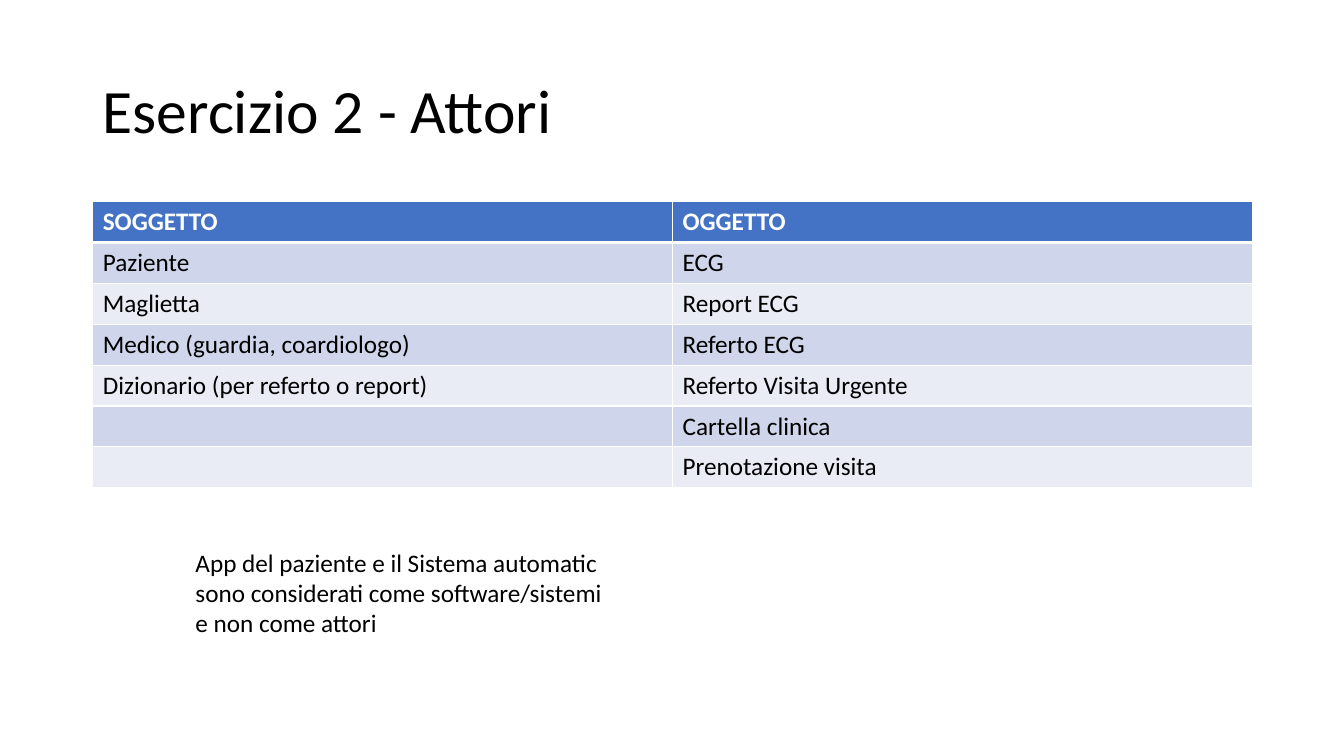
from dataclasses import dataclass

from lxml.etree import SubElement
from pptx import Presentation
from pptx.dml.color import RGBColor
from pptx.enum.text import MSO_ANCHOR
from pptx.oxml.ns import qn
from pptx.util import Inches, Pt


@dataclass(frozen=True)
class Theme:
    """Colours, font and type sizes of the slide."""

    font: str = "Calibri"
    title_size: int = 44
    body_size: int = 18
    text: str = "000000"
    white: str = "FFFFFF"
    header: str = "4472C4"
    bands: tuple = ("CFD5EA", "E9EBF5")
    thin_border: int = 1
    thick_border: int = 3


THEME = Theme()

ACTORS = [
    ("SOGGETTO", "OGGETTO"),
    ("Paziente", "ECG"),
    ("Maglietta", "Report ECG"),
    ("Medico (guardia, coardiologo)", "Referto ECG"),
    ("Dizionario (per referto o report)", "Referto Visita Urgente"),
    ("", "Cartella clinica"),
    ("", "Prenotazione visita"),
]


def write_text(frame, text, size=THEME.body_size, color=THEME.text, bold=False, line_spacing=None):
    """Write one formatted paragraph into a text frame."""
    paragraph = frame.paragraphs[0]
    paragraph.text = text
    paragraph.line_spacing = line_spacing
    paragraph.font.name = THEME.font
    paragraph.font.size = Pt(size)
    paragraph.font.bold = bold
    paragraph.font.color.rgb = RGBColor.from_string(color)


def add_text_box(slide, left, top, width, height, text, anchor=MSO_ANCHOR.TOP, **text_format):
    """Add a wrapping text box with one paragraph."""
    box = slide.shapes.add_textbox(Inches(left), Inches(top), Inches(width), Inches(height))
    frame = box.text_frame
    frame.word_wrap = True
    frame.vertical_anchor = anchor
    write_text(frame, text, **text_format)


def add_border(cell, side, width):
    """Draw a white border on one side of a cell."""
    properties = cell._tc.get_or_add_tcPr()
    line = SubElement(properties, qn(f"a:ln{side}"), w=str(Pt(width)))
    fill = SubElement(line, qn("a:solidFill"))
    SubElement(fill, qn("a:srgbClr"), val=THEME.white)


def format_cell(cell, text, row_index):
    """Fill, border and label a cell according to its row."""
    is_header = row_index == 0
    top = THEME.thick_border if row_index == 1 else THEME.thin_border
    bottom = THEME.thick_border if is_header else THEME.thin_border
    for side, width in zip("LRTB", (THEME.thin_border, THEME.thin_border, top, bottom)):
        add_border(cell, side, width)
    fill_color = THEME.header if is_header else THEME.bands[(row_index - 1) % 2]
    cell.fill.solid()
    cell.fill.fore_color.rgb = RGBColor.from_string(fill_color)
    text_color = THEME.white if is_header else THEME.text
    write_text(cell.text_frame, text, color=text_color, bold=is_header)


def add_table(slide, left, top, width, height, rows):
    """Add a banded table with equal columns and rows."""
    frame = slide.shapes.add_table(
        len(rows), len(rows[0]), Inches(left), Inches(top), Inches(width), Inches(height)
    )
    for row_index, row in enumerate(rows):
        for column_index, text in enumerate(row):
            format_cell(frame.table.cell(row_index, column_index), text, row_index)


def main():
    """Build and save the slide."""
    presentation = Presentation()
    presentation.slide_width = Inches(13.33)
    presentation.slide_height = Inches(7.5)
    slide = presentation.slides.add_slide(presentation.slide_layouts[6])
    add_text_box(
        slide, 0.92, 0.4, 11.5, 1.45, "Esercizio 2 - Attori",
        anchor=MSO_ANCHOR.MIDDLE, size=THEME.title_size, line_spacing=0.9,
    )
    add_table(slide, 0.92, 2, 11.5, 2.84, ACTORS)
    add_text_box(
        slide, 1.84, 5.38, 4.28, 1.01,
        "App del paziente e il Sistema automatic sono considerati "
        "come software/sistemi e non come attori",
    )
    presentation.save("out.pptx")


if __name__ == "__main__":
    main()
